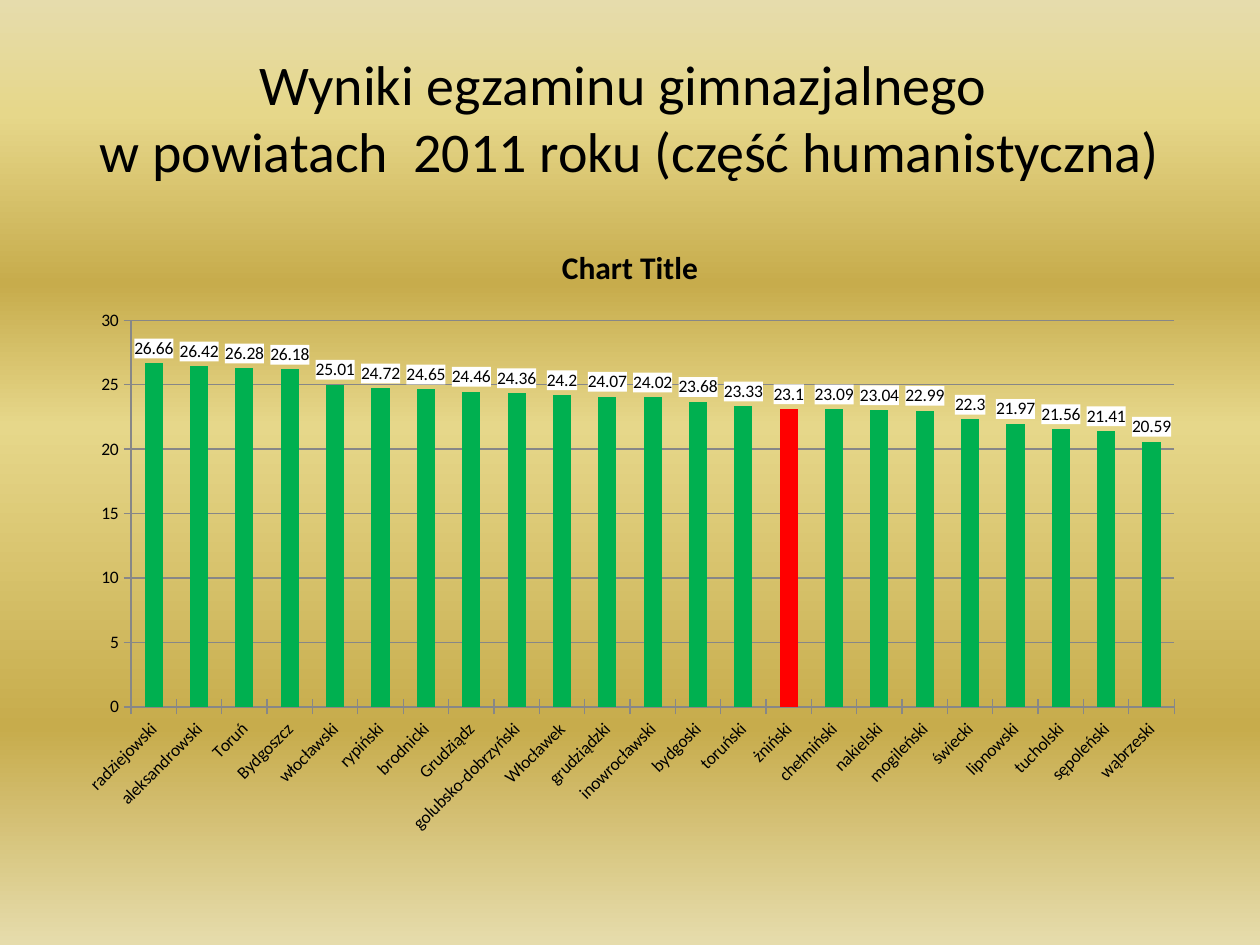
import pptx
import pptx.chart.data
import pptx.dml.color
import pptx.enum.chart
import pptx.enum.text
import pptx.oxml
import pptx.oxml.ns
import pptx.util

Pt = pptx.util.Pt
RGBColor = pptx.dml.color.RGBColor
qn = pptx.oxml.ns.qn

BLACK = RGBColor(0x00, 0x00, 0x00)
GREEN = RGBColor(0x00, 0xB0, 0x50)
RED = RGBColor(0xFF, 0x00, 0x00)
GREY = RGBColor(0x87, 0x87, 0x87)
SAND = RGBColor(0xE6, 0xDC, 0xAC)
PALE_GOLD = RGBColor(0xE6, 0xD7, 0x8A)
GOLD = RGBColor(0xC7, 0xAC, 0x4C)
FONT = "Calibri"

STOPS = [(0, SAND), (12, PALE_GOLD), (30, GOLD), (45, PALE_GOLD), (77, GOLD), (100, SAND)]
TITLE = ["Wyniki egzaminu gimnazjalnego ", "w powiatach  2011 roku (część humanistyczna)"]
HIGHLIGHT = "żniński"
RESULTS = {
    "radziejowski": 26.66, "aleksandrowski": 26.42, "Toruń": 26.28, "Bydgoszcz": 26.18,
    "włocławski": 25.01, "rypiński": 24.72, "brodnicki": 24.65, "Grudziądz": 24.46,
    "golubsko-dobrzyński": 24.36, "Włocławek": 24.2, "grudziądzki": 24.07,
    "inowrocławski": 24.02, "bydgoski": 23.68, "toruński": 23.33, "żniński": 23.1,
    "chełmiński": 23.09, "nakielski": 23.04, "mogileński": 22.99, "świecki": 22.3,
    "lipnowski": 21.97, "tucholski": 21.56, "sępoleński": 21.41, "wąbrzeski": 20.59,
}


def style_font(font, size, bold=False):
    font.name = FONT
    font.size = Pt(size)
    font.bold = bold
    font.color.rgb = BLACK


def paint_background(s):
    fill = s.background.fill
    fill.gradient()
    fill.gradient_angle = 270
    stops = "".join(
        f'<a:gs pos="{pos * 1000}"><a:srgbClr val="{color}"/></a:gs>' for pos, color in STOPS
    )
    new = pptx.oxml.parse_xml(
        '<a:gsLst xmlns:a="http://schemas.openxmlformats.org/drawingml/2006/main">'
        f"{stops}</a:gsLst>"
    )
    old = next(s.background._cSld.iter(qn("a:gsLst")))
    old.getparent().replace(old, new)


def add_title(s, x, y, w, h):
    tf = s.shapes.add_textbox(Pt(x), Pt(y), Pt(w), Pt(h)).text_frame
    tf.word_wrap = True
    tf.vertical_anchor = pptx.enum.text.MSO_ANCHOR.MIDDLE
    p = tf.paragraphs[0]
    p.alignment = pptx.enum.text.PP_ALIGN.CENTER
    for i, line in enumerate(TITLE):
        if i:
            p.add_line_break()
        r = p.add_run()
        r.text = line
        style_font(r.font, 32)


def place_plot(chart, x, y, w, h):
    plot_area = chart._chartSpace.chart.plotArea
    for old in plot_area.findall(qn("c:layout")):
        plot_area.remove(old)
    sizes = "".join(f'<c:{k} val="{v}"/>' for k, v in zip("xywh", (x, y, w, h)))
    plot_area.insert(0, pptx.oxml.parse_xml(
        '<c:layout xmlns:c="http://schemas.openxmlformats.org/drawingml/2006/chart">'
        '<c:manualLayout><c:layoutTarget val="inner"/>'
        f'<c:xMode val="edge"/><c:yMode val="edge"/>{sizes}</c:manualLayout></c:layout>'
    ))


def style_axis(axis):
    axis.major_tick_mark = pptx.enum.chart.XL_TICK_MARK.CROSS
    axis.minor_tick_mark = pptx.enum.chart.XL_TICK_MARK.NONE
    axis.format.line.color.rgb = GREY
    axis.format.line.width = Pt(0.75)
    style_font(axis.tick_labels.font, 10)


def add_results_chart(s, x, y, w, h):
    data = pptx.chart.data.CategoryChartData()
    data.categories = list(RESULTS)
    data.add_series("Series 1", list(RESULTS.values()))
    chart = s.shapes.add_chart(
        pptx.enum.chart.XL_CHART_TYPE.COLUMN_CLUSTERED, Pt(x), Pt(y), Pt(w), Pt(h), data
    ).chart
    style_font(chart.font, 10)
    chart.has_legend = False
    chart.has_title = True
    r = chart.chart_title.text_frame.paragraphs[0].add_run()
    r.text = "Chart Title"
    style_font(r.font, 18, True)
    chart.chart_title.include_in_layout = False
    place_plot(chart, 0.06, 0.16, 0.92, 0.62)

    style_axis(chart.category_axis)
    chart.category_axis._element.txPr.find(qn("a:bodyPr")).set("rot", "-2700000")
    axis = chart.value_axis
    style_axis(axis)
    axis.minimum_scale, axis.maximum_scale, axis.major_unit = 0, 30, 5
    axis.has_major_gridlines = True
    axis.major_gridlines.format.line.color.rgb = GREY
    axis.major_gridlines.format.line.width = Pt(0.75)

    plot = chart.plots[0]
    plot.vary_by_categories = False
    plot.gap_width = 150
    series = plot.series[0]
    series.format.fill.solid()
    series.format.fill.fore_color.rgb = GREEN
    fill = series.points[list(RESULTS).index(HIGHLIGHT)].format.fill
    fill.solid()
    fill.fore_color.rgb = RED

    labels = series.data_labels
    labels.show_value = True
    labels.position = pptx.enum.chart.XL_LABEL_POSITION.OUTSIDE_END
    style_font(labels.font, 10)
    labels._element.find(qn("c:txPr")).addprevious(pptx.oxml.parse_xml(
        '<c:spPr xmlns:c="http://schemas.openxmlformats.org/drawingml/2006/chart" '
        'xmlns:a="http://schemas.openxmlformats.org/drawingml/2006/main">'
        '<a:solidFill><a:srgbClr val="FFFFFF"/></a:solidFill></c:spPr>'
    ))


def main():
    prs = pptx.Presentation()
    prs.slide_width, prs.slide_height = Pt(720), Pt(540)
    s = prs.slides.add_slide(prs.slide_layouts[6])
    paint_background(s)
    add_title(s, 36, 21.6, 648, 90)
    add_results_chart(s, 36, 126, 648, 356.4)
    prs.save("out.pptx")


if __name__ == "__main__":
    main()
